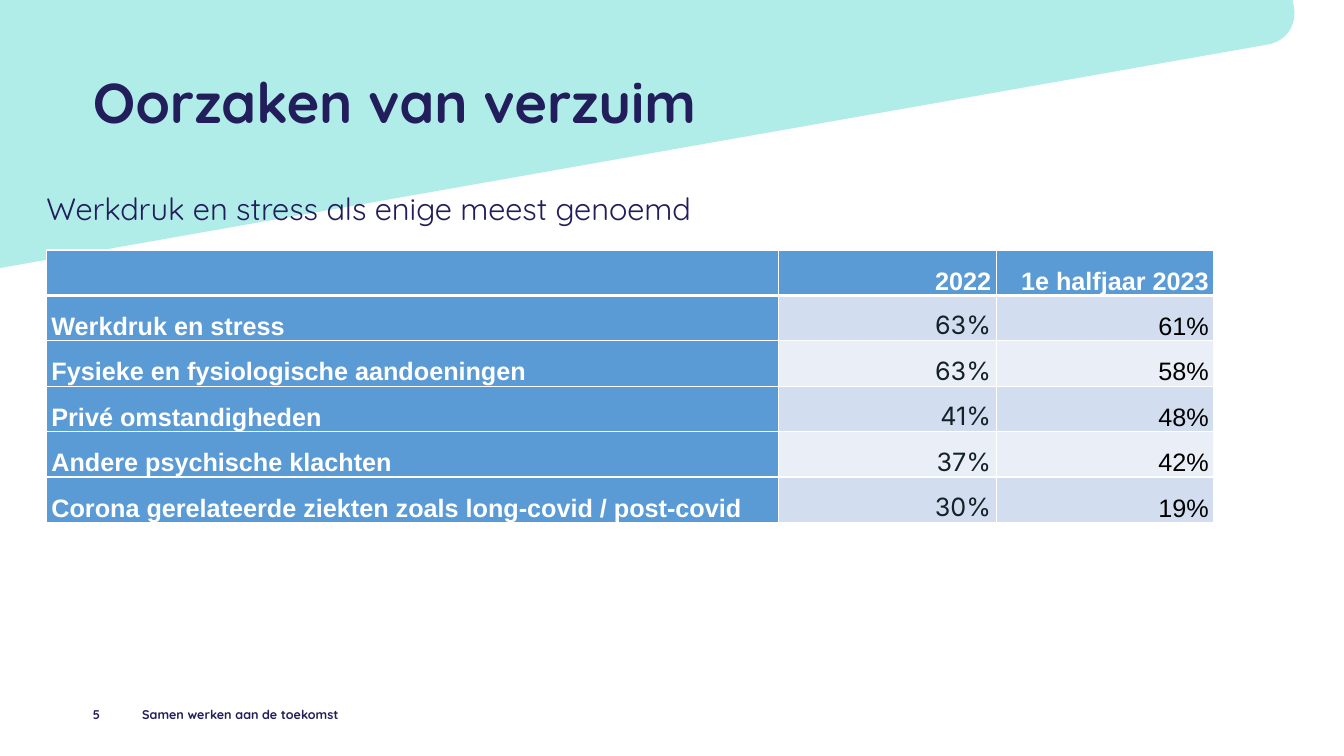
import pptx
import pptx.util
from lxml import etree
from pptx.dml.color import RGBColor
from pptx.enum.shapes import MSO_SHAPE
from pptx.enum.text import MSO_ANCHOR, PP_ALIGN
from pptx.oxml.ns import qn
from pptx.util import Inches, Pt

TITLE = "Oorzaken van verzuim"
SUBTITLE = "Werkdruk en stress als enige meest genoemd"
FOOTER = "Samen werken aan de toekomst"
PAGE_NUMBER = "5"
ROWS = [
    ("", "2022", "1e halfjaar 2023"),
    ("Werkdruk en stress", "63%", "61%"),
    ("Fysieke en fysiologische aandoeningen", "63%", "58%"),
    ("Privé omstandigheden", "41%", "48%"),
    ("Andere psychische klachten", "37%", "42%"),
    ("Corona gerelateerde ziekten zoals long-covid / post-covid", "30%", "19%"),
]
COLUMN_WIDTHS = (7.26, 2.16, 2.16)
HEADER_HEIGHT, ROW_HEIGHT = 0.42, 0.45

NAVY = RGBColor(0x21, 0x1E, 0x5B)
MINT = RGBColor(0xB1, 0xED, 0xE8)
BLUE = RGBColor(0x5B, 0x9B, 0xD5)
BANDS = (RGBColor(0xEA, 0xEF, 0xF7), RGBColor(0xD2, 0xDE, 0xEF))
WHITE = RGBColor(0xFF, 0xFF, 0xFF)
BLACK = RGBColor(0, 0, 0)
INK = RGBColor(0x14, 0x22, 0x28)


def set_font(paragraph, name, size, color, bold):
    font = paragraph.font
    font.name, font.size, font.bold = name, Pt(size), bold
    font.color.rgb = color


def add_text(slide, text, left, top, width, height, size, bold=True):
    box = slide.shapes.add_textbox(*map(Inches, (left, top, width, height)))
    frame = box.text_frame
    frame.word_wrap = True
    frame.margin_left = frame.margin_right = frame.margin_top = frame.margin_bottom = 0
    paragraph = frame.paragraphs[0]
    paragraph.text = text
    set_font(paragraph, "Quicksand", size, NAVY, bold)
    return paragraph


def add_borders(cell, widths):
    """Draw white cell borders; widths maps each side (L, R, T, B) to points."""
    properties = cell._tc.get_or_add_tcPr()
    for side, width in widths.items():
        line = etree.SubElement(properties, qn(f"a:ln{side}"), w=str(Pt(width)))
        fill = etree.SubElement(line, qn("a:solidFill"))
        etree.SubElement(fill, qn("a:srgbClr"), val=str(WHITE))


def add_causes_table(slide):
    heights = [HEADER_HEIGHT] + [ROW_HEIGHT] * (len(ROWS) - 1)
    table = slide.shapes.add_table(
        len(ROWS), len(COLUMN_WIDTHS), Inches(0.46), Inches(2.48),
        Inches(sum(COLUMN_WIDTHS)), Inches(sum(heights))).table
    for column, width in zip(table.columns, COLUMN_WIDTHS):
        column.width = Inches(width)
    for row, height in zip(table.rows, heights):
        row.height = Inches(height)

    for row_index, values in enumerate(ROWS):
        for column_index, value in enumerate(values):
            cell = table.cell(row_index, column_index)
            heading = row_index == 0 or column_index == 0
            add_borders(cell, {"L": 1, "R": 1,
                               "T": 3 if row_index == 1 else 1,
                               "B": 3 if row_index == 0 else 1})
            cell.fill.solid()
            cell.fill.fore_color.rgb = BLUE if heading else BANDS[row_index % 2]
            cell.vertical_anchor = MSO_ANCHOR.BOTTOM
            cell.margin_left = cell.margin_right = Inches(0.05)
            cell.margin_top = cell.margin_bottom = 0
            paragraph = cell.text_frame.paragraphs[0]
            paragraph.text = value
            paragraph.line_spacing = 1.5
            paragraph.alignment = PP_ALIGN.RIGHT if column_index else PP_ALIGN.LEFT
            if heading:
                set_font(paragraph, "Arial", 18, WHITE, True)
            elif column_index == 1:
                set_font(paragraph, "Inter", 18, INK, False)
            else:
                set_font(paragraph, "Arial", 18, BLACK, False)


def main():
    presentation = pptx.Presentation()
    presentation.slide_width = Inches(13.33)
    presentation.slide_height = Inches(7.5)
    slide = presentation.slides.add_slide(presentation.slide_layouts[6])

    banner = slide.shapes.add_shape(
        MSO_SHAPE.ROUNDED_RECTANGLE,
        Inches(-0.75), Inches(-1.09), Inches(13.51), Inches(2.67))
    banner.adjustments[0] = 0.117
    banner.rotation = 350
    banner.shadow.inherit = False
    banner.fill.solid()
    banner.fill.fore_color.rgb = MINT
    banner.line.fill.background()

    add_text(slide, TITLE, 0.92, 0.67, 11.25, 1.32, 40)
    subtitle = add_text(slide, SUBTITLE, 0.46, 1.77, 11.96, 0.6, 22, bold=False)
    subtitle.line_spacing = 1.3
    add_causes_table(slide)
    add_text(slide, PAGE_NUMBER, 0.92, 7.01, 0.48, 0.4, 9)
    add_text(slide, FOOTER, 1.41, 7.01, 3.58, 0.4, 9)
    presentation.save("out.pptx")


if __name__ == "__main__":
    main()
